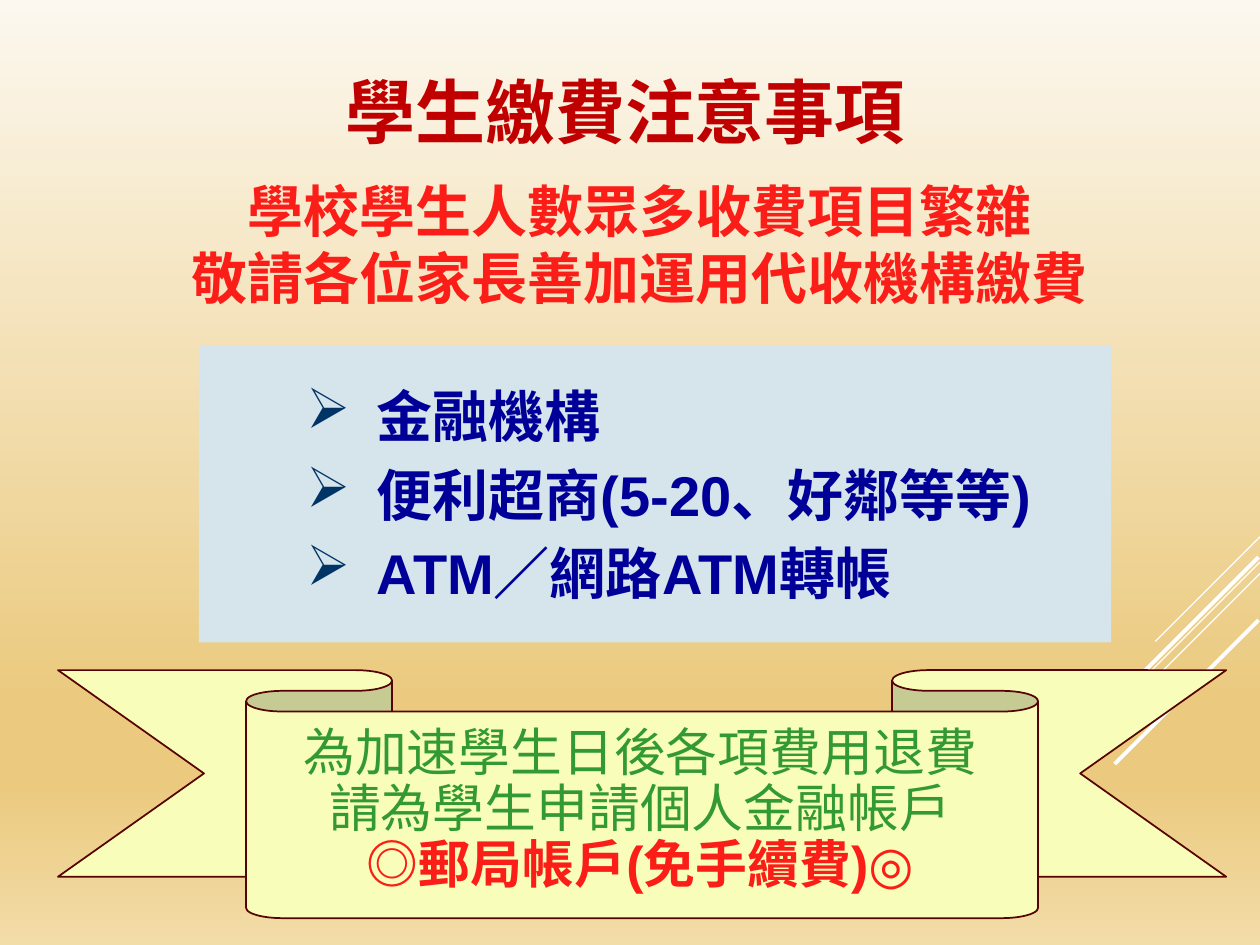
from lxml import etree
from pptx import Presentation
from pptx.dml.color import RGBColor
from pptx.enum.shapes import MSO_CONNECTOR, MSO_SHAPE
from pptx.enum.text import MSO_ANCHOR, MSO_AUTO_SIZE, PP_ALIGN
from pptx.oxml.ns import qn
from pptx.util import Cm, Pt

STRAIGHT = MSO_CONNECTOR.STRAIGHT
RIBBON = MSO_SHAPE.DOWN_RIBBON
CENTER, LEFT = PP_ALIGN.CENTER, PP_ALIGN.LEFT
TOP, MIDDLE = MSO_ANCHOR.TOP, MSO_ANCHOR.MIDDLE
FIXED, GROW = MSO_AUTO_SIZE.NONE, MSO_AUTO_SIZE.SHAPE_TO_FIT_TEXT

RED, DARK_RED, GREEN, NAVY = "FB1D17", "C00000", "339933", "000099"


def rgb(code):
    return RGBColor.from_string(code)


def add_xml(parent, tag, **attributes):
    return etree.SubElement(parent, qn(tag), attributes)


class SlideBuilder:
    font = "Arial"

    def __init__(self, slide):
        self.slide = slide

    def background(self, stops):
        fill = self.slide.background.fill
        fill.gradient()
        fill.gradient_angle = 270
        stop_list = next(self.slide.element.iter(qn("a:gsLst")))
        for old_stop in list(stop_list):
            stop_list.remove(old_stop)
        for percent, color in stops:
            stop = add_xml(stop_list, "a:gs", pos=str(percent * 1000))
            add_xml(stop, "a:srgbClr", val=color)

    def line(self, start, end, width):
        connector = self.slide.shapes.add_connector(
            STRAIGHT, *(Cm(value) for value in start + end))
        connector.line.color.rgb = rgb("FFFFFF")
        connector.line.width = Pt(width)
        add_xml(connector.element.spPr, "a:effectLst")

    def place(self, shape, area):
        shape.left, shape.top, shape.width, shape.height = map(Cm, area)

    def frame(self, box, anchor, auto_size=FIXED):
        frame = box.text_frame
        frame.word_wrap = True
        frame.vertical_anchor = anchor
        frame.auto_size = auto_size
        return frame

    def fill_text(self, frame, lines, size, align=CENTER, bold=True,
                  spacing=1.0, before=0, indent=None, bullet=None):
        """Fill a frame with one paragraph for each (text, color) pair."""
        for index, (text, color) in enumerate(lines):
            para = frame.paragraphs[0] if index == 0 else frame.add_paragraph()
            para.text = text
            para.alignment = align
            para.line_spacing = spacing
            para.space_before = Pt(before if index else 0)
            properties = para._p.get_or_add_pPr()
            if indent:
                margin, first = indent
                properties.set("marL", str(Cm(margin)))
                properties.set("indent", str(Cm(first)))
            if bullet:
                holder = add_xml(properties, "a:buClr")
                add_xml(holder, "a:srgbClr", val="003366")
                add_xml(properties, "a:buFont", typeface="Wingdings")
                add_xml(properties, "a:buChar", char=bullet)
            para.font.name = self.font
            para.font.size = Pt(size)
            para.font.bold = bold or color == RED
            para.font.color.rgb = rgb(color)

    def title(self, text, area):
        box = self.slide.shapes.title
        self.place(box, area)
        self.fill_text(self.frame(box, MIDDLE), [(text, DARK_RED)], 40)

    def bullets(self, items, area):
        box = self.slide.placeholders[1]
        self.place(box, area)
        box.fill.solid()
        box.fill.fore_color.rgb = rgb("D5E5EB")
        self.fill_text(self.frame(box, MIDDLE),
                       [(item, NAVY) for item in items], 32, LEFT,
                       before=6.4, indent=(3.33, -1.42), bullet="Ø")

    def text(self, lines, area, size, auto_size=FIXED, **style):
        box = self.slide.shapes.add_textbox(*map(Cm, area))
        self.fill_text(self.frame(box, TOP, auto_size), lines, size, **style)

    def ribbon(self, area):
        shape = self.slide.shapes.add_shape(RIBBON, *map(Cm, area))
        shape.shadow.inherit = False
        shape.adjustments[0] = 0.167
        shape.adjustments[1] = 0.678
        shape.fill.solid()
        shape.fill.fore_color.rgb = rgb("F8FEB9")
        shape.line.color.rgb = rgb("560301")
        shape.line.width = Pt(1)


def main():
    deck = Presentation()
    deck.slide_width, deck.slide_height = Cm(25.4), Cm(19.05)
    page = SlideBuilder(deck.slides.add_slide(deck.slide_layouts[1]))

    # Background and diagonal accent lines: right end, drop to the left, width
    page.background([(0, "FCF8EF"), (74, "EBCA7F"),
                     (83, "EBCA7F"), (100, "F2DCA8")])
    for x, y, drop, width in [(25.4, 10.82, 2.11, 0.75),
                              (25.4, 11.33, 6.87, 0.75),
                              (25.4, 11.56, 4.37, 0.75),
                              (25.37, 11.23, 3.99, 2.25),
                              (25.37, 12.5, 2.9, 2.25)]:
        page.line((x, y), (x - drop, y + drop), width)

    # Title, list of payment channels and introduction
    page.title("學生繳費注意事項", (1.17, 1.19, 22.86, 2.08))
    page.bullets(["金融機構", "便利超商(5-20、好鄰等等)", "ATM／網路ATM轉帳"],
                 (4.01, 6.96, 18.39, 5.99))
    page.text([("學校學生人數眾多收費項目繁雜", RED),
               ("敬請各位家長善加運用代收機構繳費", RED)],
              (2.74, 3.43, 19.69, 3), 32, GROW, indent=(0.64, 0))

    # Ribbon with the refund reminder
    page.ribbon((1.17, 13.51, 23.55, 5))
    page.text([("為加速學生日後各項費用退費", GREEN),
               ("請為學生申請個人金融帳戶", GREEN),
               ("◎郵局帳戶(免手續費)◎", RED)],
              (5.11, 14.53, 15.6, 3.81), 29.6, bold=False, spacing=0.9)

    deck.save("out.pptx")


if __name__ == "__main__":
    main()
